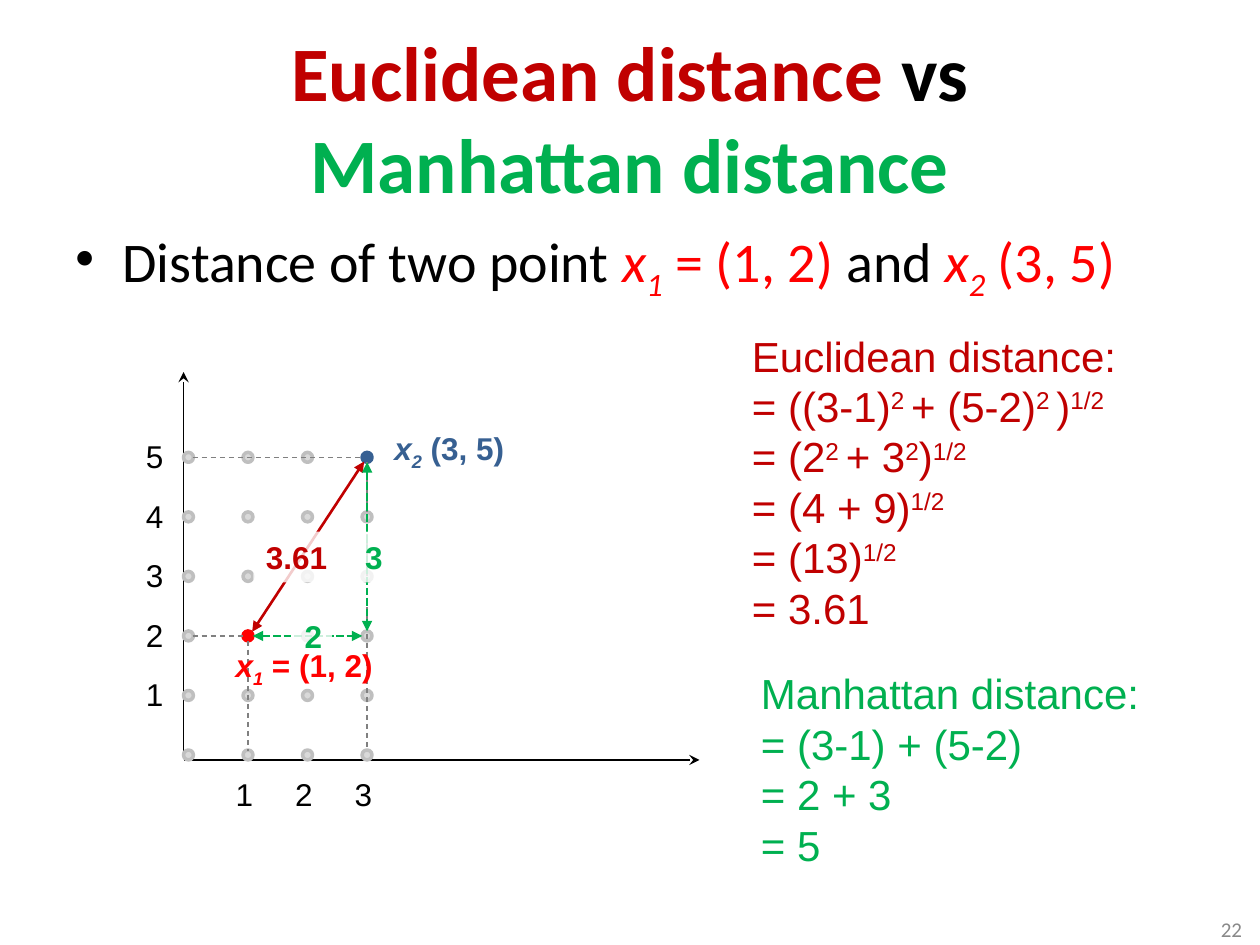
"""Builds a slide that compares Euclidean and Manhattan distance on a grid."""
from lxml import etree
from pptx import Presentation, util as u
from pptx.dml.color import RGBColor
from pptx.enum import dml, shapes, text
from pptx.oxml import ns

BLACK, GREY, DARK, GREEN = "000000", "808080", "C00000", "00B050"
RED, BLUE, WHITE = "FF0000", "376092", "FFFFFF"
STEP, LEFT, BASE, DOT = 1.2, 3.8, 15.22, 0.2
COLS, ROWS = 3, 5
ONE, TWO = (1, 2), (3, 5)
BASES = {"^": "30000", "_": "-25000"}

TITLE = [(DARK, "Euclidean distance "), (BLACK, "vs"), (GREEN, "\n|Manhattan distance")]
POINT = [(BLACK, "Distance of two point "), (RED, "*x|_1| = (1, 2)"),
         (BLACK, " and "), (RED, "*x|_2| (3, 5)")]
EUCLID = ["Euclidean distance:", "= ((3-1)|^2 |+ (5-2)|^2 |)|^1/2",
          "= (2|^2 |+ 3|^2|)|^1/2", "= (4 + 9)|^1/2", "= (13)|^1/2", "= 3.61"]
MANHAT = ["Manhattan distance:", "= (3-1) + (5-2)", "= 2 + 3", "= 5"]
SUMS = [((14.91, 6.53, 9.4, 6.4), DARK, EUCLID),
        ((15.09, 13.34, 9.4, 4.37), GREEN, MANHAT)]
NAMES = [((7.7, 8.53, 4, 1.02), BLUE, "*x|_2| (3, 5)"),
         ((4.5, 12.9, 4, 1.02), RED, "*x|_1| = (1, 2)")]
SIZES = [((5.89, 12.32, 0.8, 1.02), GREEN, "2"),
         ((7.11, 10.72, 0.8, 1.02), GREEN, "3"),
         ((5.11, 10.72, 1.8, 1.02), DARK, "3.61")]
AXES = [((3.7, 15.32), (14.1, 15.32)), ((3.7, 15.3), (3.7, 7.5))]
GUIDES = [((1, 1.92), (1, 0.07)), ((3, 4.92), (3, 0.07)),
          ((0.07, 2), (0.92, 2)), ((0.07, 5), (2.92, 5))]
SPANS = [((2.95, 4.93), (1.07, 2.07), None), ((1.08, 2), (2.92, 2), "dash"),
         ((3, 4.92), (3, 2.08), "dash")]


def rgb(code):
    return RGBColor.from_string(code)


def spot(col, row):
    return LEFT + STEP * col, BASE - STEP * row


def child(node, tag, **attrs):
    return etree.SubElement(node, ns.qn("a:" + tag), attrs)


def write(para, parts, size, font="Arial", bold=False):
    para.font.size, para.font.name, para.font.bold = u.Pt(size), font, bold
    for code, line in parts:
        for bit in line.split("|"):
            if bit == "\n":
                para.add_line_break()
                continue
            run = para.add_run()
            run.text = bit.lstrip("*_^")
            run.font.color.rgb = rgb(code)
            if bit[0] in "*_":
                run.font.italic = True
            if bit[0] in BASES:
                run.font._element.set("baseline", BASES[bit[0]])


def label(slide, area, lines, size=18, font="Arial", bold=False, veil=False):
    box = slide.shapes.add_textbox(*map(u.Cm, area))
    frame = box.text_frame
    frame.word_wrap = True
    if veil:
        box.fill.solid()
        box.fill.fore_color.rgb = rgb(WHITE)
        tint = box._element.spPr.find(ns.qn("a:solidFill"))[0]
        child(tint, "alpha", val="80000")
    for num, parts in enumerate(lines):
        para = frame.add_paragraph() if num else frame.paragraphs[0]
        write(para, parts, size, font, bold)
    return frame


def rule(slide, start, end, code, width=0.75, dash=None, head=None, tail=None):
    link = slide.shapes.add_connector(shapes.MSO_CONNECTOR.STRAIGHT,
                                      *map(u.Cm, (*start, *end)))
    link.line.color.rgb, link.line.width = rgb(code), u.Pt(width)
    if dash:
        link.line.dash_style = dash
    stroke = link.line._get_or_add_ln()
    for tag, kind in (("headEnd", head), ("tailEnd", tail)):
        if kind:
            child(stroke, tag, type=kind)
    child(link._element.spPr, "effectLst")


def dot(slide, col, row, fill="D9D9D9", edge="BFBFBF"):
    x, y = spot(col, row)
    mark = slide.shapes.add_shape(shapes.MSO_SHAPE.OVAL, u.Cm(x - DOT / 2),
                                  u.Cm(y - DOT / 2), u.Cm(DOT), u.Cm(DOT))
    mark.shadow.inherit = False
    mark.fill.solid()
    mark.fill.fore_color.rgb = rgb(fill)
    mark.line.color.rgb, mark.line.width = rgb(edge), u.Pt(2)


def head(slide):
    title = slide.shapes.title
    title.left, title.top, title.width, title.height = map(
        u.Cm, (1.27, 0.76, 22.86, 3.18))
    frame = title.text_frame
    frame.auto_size = text.MSO_AUTO_SIZE.NONE
    frame.vertical_anchor = text.MSO_ANCHOR.MIDDLE
    para = frame.paragraphs[0]
    para.alignment = text.PP_ALIGN.CENTER
    write(para, TITLE, 44, "Calibri", True)

    para = label(slide, (1.27, 4.45, 22.86, 2.08), [POINT], 32, "Calibri").paragraphs[0]
    para.space_before = u.Pt(6.4)
    props = para._element.get_or_add_pPr()
    props.set("marL", str(u.Cm(0.95)))
    props.set("indent", str(u.Cm(-0.95)))
    bullet = etree.Element(ns.qn("a:buChar"), {"char": "•"})
    props.find(ns.qn("a:spcBef")).addnext(bullet)


def graph(slide):
    for start, end in AXES:
        rule(slide, start, end, BLACK, tail="stealth")
    ticks = [((4.5 + STEP * n, 15.5), n + 1) for n in range(COLS)]
    ticks += [((2.69, 13.49 - STEP * n), n + 1) for n in range(ROWS)]
    for place, num in ticks:
        label(slide, (*place, STEP, 1.02), [[(BLACK, str(num))]])
    for col in range(COLS + 1):
        for row in range(ROWS + 1):
            if (col, row) not in (ONE, TWO):
                dot(slide, col, row)
    dot(slide, *ONE, RED, RED)
    dot(slide, *TWO, BLUE, BLUE)
    for start, end in GUIDES:
        rule(slide, spot(*start), spot(*end), GREY, dash=dml.MSO_LINE.DASH)
    for start, end, dash in SPANS:
        rule(slide, spot(*start), spot(*end), GREEN if dash else DARK, 1.5,
             dash and dml.MSO_LINE.SQUARE_DOT, "triangle", "triangle")
    for group, veil in ((SIZES, True), (NAMES, False)):
        for area, code, line in group:
            label(slide, area, [[(code, line)]], bold=True, veil=veil)


def main():
    deck = Presentation()
    deck.slide_width, deck.slide_height = u.Cm(25.4), u.Cm(19.05)
    slide = deck.slides.add_slide(deck.slide_layouts[5])
    head(slide)
    graph(slide)
    for area, code, lines in SUMS:
        label(slide, area, [[(code, line)] for line in lines], 24, veil=True)
    page = label(slide, (23.29, 18.34, 2, 0.79), [[("898989", "22")]], 12, "Calibri")
    page.vertical_anchor = text.MSO_ANCHOR.MIDDLE
    page.paragraphs[0].alignment = text.PP_ALIGN.RIGHT
    deck.save("out.pptx")


if __name__ == "__main__":
    main()
